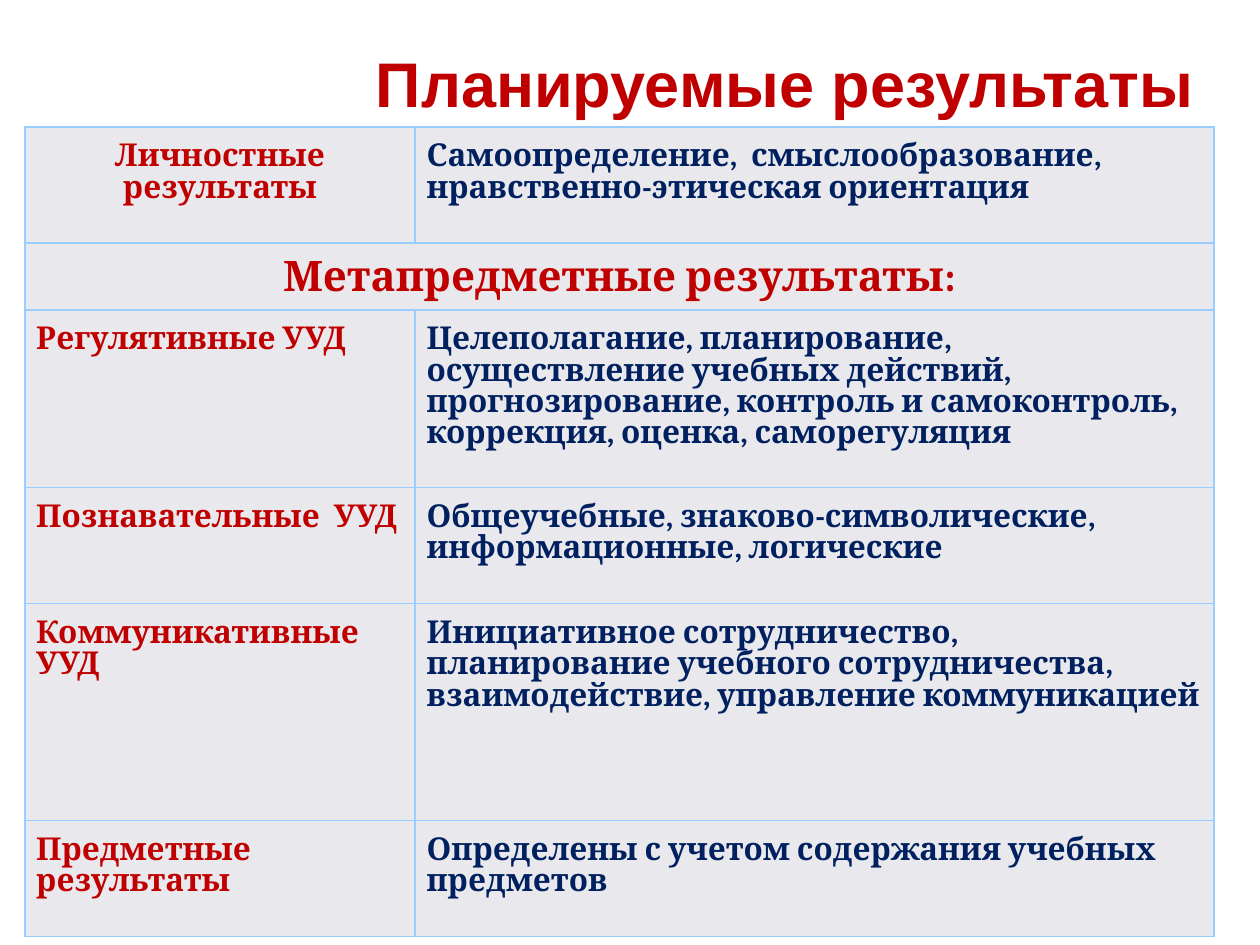
from dataclasses import dataclass

from lxml import etree
from pptx import Presentation
from pptx.dml.color import RGBColor
from pptx.enum.text import MSO_ANCHOR, MSO_AUTO_SIZE, PP_ALIGN
from pptx.oxml.ns import qn
from pptx.util import Cm, Pt

LEFT, CENTER, RIGHT = PP_ALIGN.LEFT, PP_ALIGN.CENTER, PP_ALIGN.RIGHT
TOP = MSO_ANCHOR.TOP
NO_AUTOFIT = MSO_AUTO_SIZE.NONE
TITLE_ONLY = 5


@dataclass(frozen=True)
class Theme:
    accent: str = "C00000"
    body: str = "002060"
    cell_fill: str = "E9E9ED"
    border: str = "99CCFF"
    background: str = "FFFFFF"
    title_font: str = "Arial"
    table_font: str = "Cambria"
    title_size: int = 36
    section_size: int = 24
    text_size: int = 18
    border_width: int = 1
    line_spacing: float = 0.86
    space_before: float = 0.2


THEME = Theme()

COLUMN_WIDTHS = (7.87, 16.1)
ROW_HEIGHTS = (2.34, 1.35, 3.58, 2.34, 4.37, 2.34)
SECTION_ROW = 1
RESULTS = (
    ("Личностные результаты",
     "Самоопределение,  смыслообразование, нравственно-этическая ориентация"),
    ("Метапредметные результаты:", None),
    ("Регулятивные УУД",
     "Целеполагание, планирование,  осуществление учебных действий, "
     "прогнозирование, контроль и самоконтроль, коррекция, оценка, саморегуляция"),
    ("Познавательные  УУД",
     "Общеучебные, знаково-символические, информационные, логические"),
    ("Коммуникативные УУД",
     "Инициативное сотрудничество, планирование учебного сотрудничества, "
     "взаимодействие, управление коммуникацией"),
    ("Предметные результаты",
     "Определены с учетом содержания учебных предметов"),
)


def add_run(paragraph, text, font, size, color):
    run = paragraph.add_run()
    run.text = text
    run.font.name = font
    run.font.size = Pt(size)
    run.font.bold = True
    run.font.color.rgb = RGBColor.from_string(color)


def set_borders(cell):
    properties = cell._tc.get_or_add_tcPr()
    for index, side in enumerate(("lnL", "lnR", "lnT", "lnB")):
        line = etree.Element(qn(f"a:{side}"), w=str(Pt(THEME.border_width)))
        fill = etree.SubElement(line, qn("a:solidFill"))
        etree.SubElement(fill, qn("a:srgbClr"), val=THEME.border)
        properties.insert(index, line)


def format_cell(cell):
    cell.fill.solid()
    cell.fill.fore_color.rgb = RGBColor.from_string(THEME.cell_fill)
    cell.margin_left = cell.margin_right = Cm(0.23)
    cell.margin_top, cell.margin_bottom = Cm(0.3), Cm(0.13)
    cell.vertical_anchor = TOP
    set_borders(cell)


def write_cell(cell, text, size, color, alignment):
    paragraph = cell.text_frame.paragraphs[0]
    paragraph.alignment = alignment
    paragraph.line_spacing = THEME.line_spacing
    paragraph.space_before = Pt(size * THEME.space_before)
    add_run(paragraph, text, THEME.table_font, size, color)


def place_title(slide, left, top, width, height):
    title = slide.shapes.title
    title.left, title.top, title.width, title.height = left, top, width, height
    frame = title.text_frame
    frame.word_wrap = True
    frame.auto_size = NO_AUTOFIT
    frame.vertical_anchor = TOP
    paragraph = frame.paragraphs[0]
    paragraph.alignment = RIGHT
    paragraph.line_spacing = 1.0
    paragraph.space_before = Pt(0)
    add_run(paragraph, "Планируемые результаты", THEME.title_font,
            THEME.title_size, THEME.accent)


def place_results_table(slide, left, top, width, height):
    table = slide.shapes.add_table(
        len(ROW_HEIGHTS), len(COLUMN_WIDTHS), left, top, width, height).table
    table.first_row = table.horz_banding = False
    for column, share in zip(table.columns, COLUMN_WIDTHS):
        column.width = int(width * share / sum(COLUMN_WIDTHS))
    for row, share in zip(table.rows, ROW_HEIGHTS):
        row.height = int(height * share / sum(ROW_HEIGHTS))
    for cell in table.iter_cells():
        format_cell(cell)
    table.cell(SECTION_ROW, 0).merge(table.cell(SECTION_ROW, 1))

    for index, (label, description) in enumerate(RESULTS):
        size = THEME.section_size if index == SECTION_ROW else THEME.text_size
        alignment = CENTER if index <= SECTION_ROW else LEFT
        write_cell(table.cell(index, 0), label, size, THEME.accent, alignment)
        if description:
            write_cell(table.cell(index, 1), description, THEME.text_size,
                       THEME.body, LEFT)


def main():
    presentation = Presentation()
    presentation.slide_width, presentation.slide_height = Cm(25.4), Cm(19.05)
    slide = presentation.slides.add_slide(presentation.slide_layouts[TITLE_ONLY])
    slide.background.fill.solid()
    slide.background.fill.fore_color.rgb = RGBColor.from_string(THEME.background)
    place_results_table(slide, Cm(0.5), Cm(2.56),
                        Cm(sum(COLUMN_WIDTHS)), Cm(sum(ROW_HEIGHTS)))
    place_title(slide, Cm(6.91), Cm(0.76), Cm(17.4), Cm(1.8))
    presentation.save("out.pptx")


if __name__ == "__main__":
    main()
